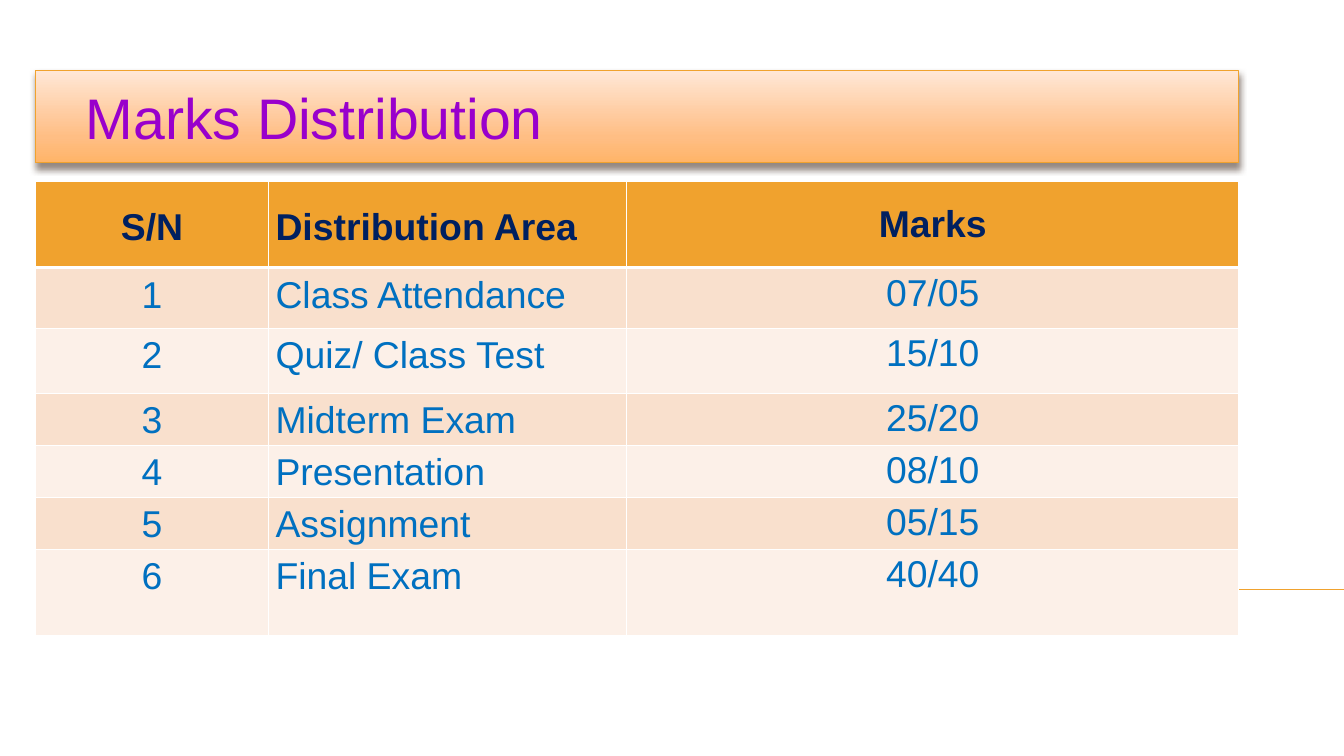
"""Build the marks distribution slide."""
import dataclasses

import lxml.etree
import pptx
import pptx.dml.color
import pptx.enum.shapes
import pptx.enum.text
import pptx.oxml
import pptx.oxml.ns
import pptx.util

RGBColor = pptx.dml.color.RGBColor
Inches = pptx.util.Inches
Pt = pptx.util.Pt
Align = pptx.enum.text.PP_ALIGN
Anchor = pptx.enum.text.MSO_ANCHOR
qn = pptx.oxml.ns.qn

ORANGE = RGBColor(0xF0, 0xA2, 0x2E)
PURPLE = RGBColor(0x99, 0x00, 0xCC)
NAVY = RGBColor(0x00, 0x20, 0x60)
BLUE = RGBColor(0x00, 0x70, 0xC0)
WHITE = RGBColor(0xFF, 0xFF, 0xFF)
BROWN = RGBColor(0x4E, 0x3B, 0x30)
BANDS = (RGBColor(0xF9, 0xE0, 0xCD), RGBColor(0xFC, 0xF0, 0xE8))
TITLE_STOPS = (
    (0, RGBColor(0xFF, 0xE7, 0xD7)),
    (72, RGBColor(0xFF, 0xBE, 0x84)),
    (100, RGBColor(0xFF, 0xB4, 0x68)),
)
FONT = "Arial"
LEFT = 0.42
WIDTH = 14.33


@dataclasses.dataclass(frozen=True)
class Column:
    width: float
    align: Align
    spacing: float
    side_margin: float
    top_margin: float


@dataclasses.dataclass(frozen=True)
class Row:
    height: float
    texts: tuple[str, str, str]


COLUMNS = (
    Column(2.78, Align.CENTER, 1.15, 0.08, 0),
    Column(4.26, Align.LEFT, 1.15, 0.08, 0),
    Column(7.29, Align.CENTER, 1.0, 0.1, 0.05),
)
ROWS = (
    Row(1.03, ("S/N", "Distribution Area", "Marks")),
    Row(0.72, ("1", "Class Attendance", "07/05")),
    Row(0.77, ("2", "Quiz/ Class Test", "15/10")),
    Row(0.62, ("3", "Midterm Exam", "25/20")),
    Row(0.62, ("4", "Presentation", "08/10")),
    Row(0.62, ("5", "Assignment", "05/15")),
    Row(1.03, ("6", "Final Exam", "40/40")),
)


def style_text(para, size: float, color: RGBColor, bold: bool = False) -> None:
    for span in para.runs:
        span.font.name = FONT
        span.font.size = Pt(size)
        span.font.bold = bold
        span.font.color.rgb = color


def add_color(parent, color: RGBColor):
    return lxml.etree.SubElement(parent, qn("a:srgbClr"), val=str(color))


def add_rule(page) -> None:
    rule = page.shapes.add_connector(
        pptx.enum.shapes.MSO_CONNECTOR.STRAIGHT,
        Inches(0.9), Inches(7.02), Inches(16), Inches(7.02))
    rule.line.color.rgb = ORANGE
    rule.line.width = Pt(0.75)
    lxml.etree.SubElement(rule._element.spPr, qn("a:effectLst"))


def add_title(page) -> None:
    box = page.shapes.add_shape(
        pptx.enum.shapes.MSO_SHAPE.RECTANGLE,
        Inches(LEFT), Inches(0.84), Inches(WIDTH), Inches(1.1))
    box.fill.gradient()
    box.fill.gradient_angle = 270
    box.line.color.rgb = ORANGE
    box.line.width = Pt(0.79)
    box.shadow.inherit = False

    properties = box._element.spPr
    stops = properties.find(".//" + qn("a:gsLst"))
    for stop in list(stops):
        stops.remove(stop)
    for position, color in TITLE_STOPS:
        add_color(lxml.etree.SubElement(
            stops, qn("a:gs"), pos=str(position * 1000)), color)

    shadow = lxml.etree.SubElement(
        properties.find(qn("a:effectLst")), qn("a:outerShdw"),
        blurRad=str(Pt(6)), dist=str(Pt(4)), dir="5400000", rotWithShape="0")
    lxml.etree.SubElement(add_color(shadow, BROWN), qn("a:alpha"), val="60000")

    frame = box.text_frame
    frame.word_wrap = True
    frame.vertical_anchor = Anchor.MIDDLE
    frame.margin_left = Inches(0.6)
    frame.margin_right = Inches(0.14)
    frame.margin_top = frame.margin_bottom = Inches(0.07)
    frame.text = "Marks Distribution"
    para = frame.paragraphs[0]
    para.alignment = Align.LEFT
    style_text(para, 49, PURPLE)


def add_border(cell, side: str, width: float) -> None:
    line = lxml.etree.SubElement(
        cell._tc.get_or_add_tcPr(), qn(f"a:ln{side}"), w=str(Pt(width)))
    add_color(lxml.etree.SubElement(line, qn("a:solidFill")), WHITE)


def fill_cell(cell, text: str, column: Column, row_index: int) -> None:
    header = row_index == 0
    cell.margin_left = cell.margin_right = Inches(column.side_margin)
    cell.margin_top = cell.margin_bottom = Inches(column.top_margin)
    cell.vertical_anchor = Anchor.MIDDLE if header else Anchor.TOP
    widths = {"L": 1, "R": 1, "T": 3 if row_index == 1 else 1, "B": 3 if header else 1}
    for side, width in widths.items():
        add_border(cell, side, width)
    cell.fill.solid()
    cell.fill.fore_color.rgb = ORANGE if header else BANDS[(row_index - 1) % 2]
    cell.text_frame.text = text
    para = cell.text_frame.paragraphs[0]
    para.alignment = column.align
    para.line_spacing = column.spacing
    style_text(para, 32, NAVY if header else BLUE, header)


def add_marks_table(page) -> None:
    height = sum(row.height for row in ROWS)
    table = page.shapes.add_table(
        len(ROWS), len(COLUMNS),
        Inches(LEFT), Inches(2.16), Inches(WIDTH), Inches(height)).table
    for column_index, column in enumerate(COLUMNS):
        table.columns[column_index].width = Inches(column.width)
    for row_index, row in enumerate(ROWS):
        table.rows[row_index].height = Inches(row.height)
        for column_index, column in enumerate(COLUMNS):
            fill_cell(table.cell(row_index, column_index),
                      row.texts[column_index], column, row_index)


def main() -> None:
    deck = pptx.Presentation()
    deck.slide_width = Inches(16)
    deck.slide_height = Inches(9)
    page = deck.slides.add_slide(deck.slide_layouts[6])
    add_rule(page)
    add_title(page)
    add_marks_table(page)
    deck.save("out.pptx")


if __name__ == "__main__":
    main()
